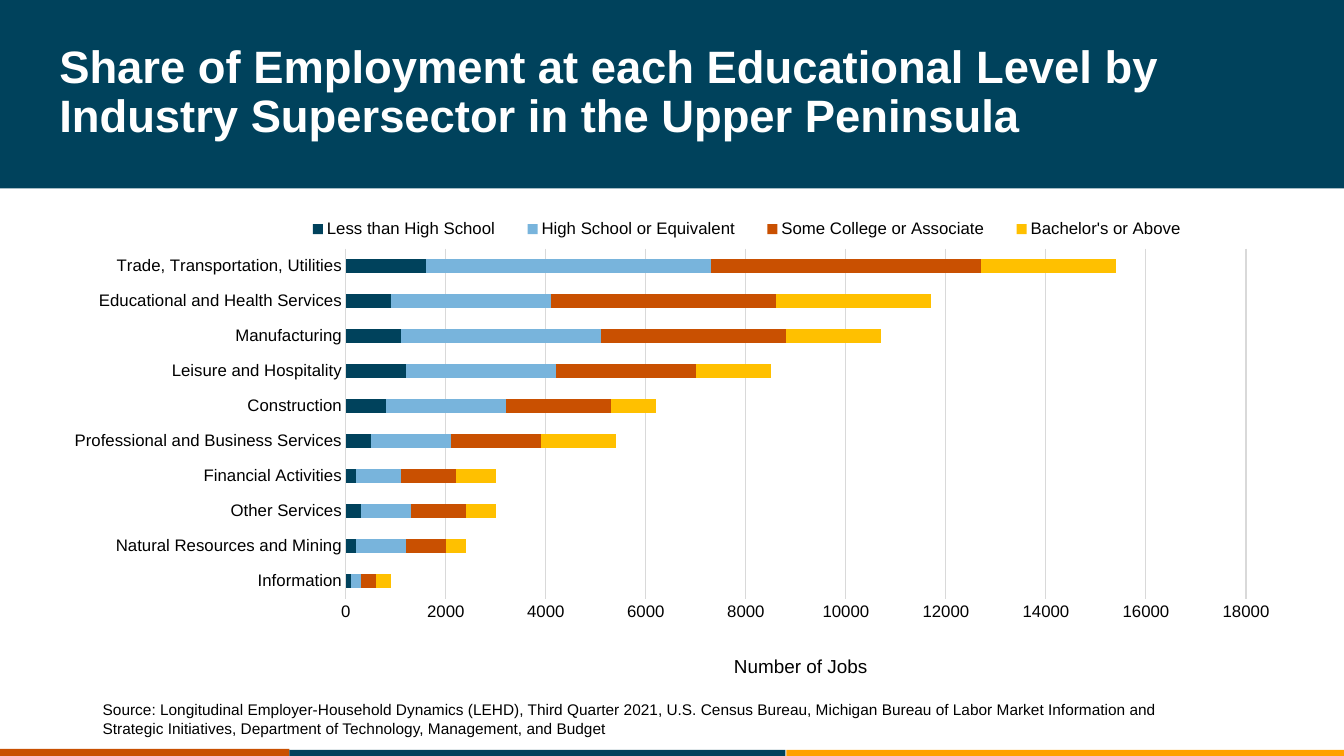
from dataclasses import dataclass

from lxml.etree import SubElement
from pptx import Presentation
from pptx.chart.data import CategoryChartData
from pptx.dml.color import RGBColor
from pptx.enum.chart import XL_CHART_TYPE, XL_LEGEND_POSITION, XL_TICK_MARK
from pptx.enum.shapes import MSO_SHAPE
from pptx.enum.text import MSO_ANCHOR
from pptx.oxml.ns import qn
from pptx.util import Inches, Pt


@dataclass(frozen=True)
class Theme:
    """Colours, font and type sizes of the slide."""
    navy: str = "00425C"
    blue: str = "78B4DC"
    rust: str = "C95001"
    gold: str = "FFC000"
    orange: str = "FFA100"
    grid: str = "D9D9D9"
    black: str = "000000"
    white: str = "FFFFFF"
    font: str = "Arial"
    title: float = 32.4
    axis_title: float = 13.5
    label: float = 12
    source: float = 11


THEME = Theme()

INDUSTRIES = [
    "Information", "Natural Resources and Mining", "Other Services",
    "Financial Activities", "Professional and Business Services",
    "Construction", "Leisure and Hospitality", "Manufacturing",
    "Educational and Health Services", "Trade, Transportation, Utilities",
]

EDUCATION_LEVELS = [
    ("Less than High School", THEME.navy,
     [100, 200, 300, 200, 500, 800, 1200, 1100, 900, 1600]),
    ("High School or Equivalent", THEME.blue,
     [200, 1000, 1000, 900, 1600, 2400, 3000, 4000, 3200, 5700]),
    ("Some College or Associate", THEME.rust,
     [300, 800, 1100, 1100, 1800, 2100, 2800, 3700, 4500, 5400]),
    ("Bachelor's or Above", THEME.gold,
     [300, 400, 600, 800, 1500, 900, 1500, 1900, 3100, 2700]),
]

BANDS = [
    (-0.01, -0.01, 13.35, 1.88, THEME.navy),
    (-0.01, 7.43, 2.88, 0.13, THEME.rust),
    (2.87, 7.44, 4.92, 0.13, THEME.navy),
    (7.8, 7.44, 5.55, 0.13, THEME.orange),
]


def style_font(font, size, color=THEME.black, bold=False):
    """Set typeface, size, colour and weight."""
    font.name = THEME.font
    font.size = Pt(size)
    font.bold = bold
    font.color.rgb = RGBColor.from_string(color)


def add_band(page, left, top, width, height, color):
    """Add a plain filled rectangle."""
    band = page.shapes.add_shape(
        MSO_SHAPE.RECTANGLE, Inches(left), Inches(top), Inches(width), Inches(height))
    band.shadow.inherit = False
    band.fill.solid()
    band.fill.fore_color.rgb = RGBColor.from_string(color)
    band.line.fill.background()


def add_text(page, bounds, text, size, color=THEME.black, bold=False,
             anchor=MSO_ANCHOR.TOP, spacing=1.0):
    """Add a wrapped text box with one paragraph."""
    box = page.shapes.add_textbox(*map(Inches, bounds))
    frame = box.text_frame
    frame.word_wrap = True
    frame.vertical_anchor = anchor
    para = frame.paragraphs[0]
    para.line_spacing = spacing
    span = para.add_run()
    span.text = text
    style_font(span.font, size, color, bold)


def place(element, index, target=None, **position):
    """Give a chart part a manual position as fractions of the chart."""
    for old in element.findall(qn("c:layout")):
        element.remove(old)
    layout = SubElement(element, qn("c:layout"))
    element.insert(index, layout)
    manual = SubElement(layout, qn("c:manualLayout"))
    settings = {"layoutTarget": target} if target else {}
    settings.update(xMode="edge", yMode="edge", **position)
    for name, value in settings.items():
        SubElement(manual, qn(f"c:{name}")).set("val", str(value))


def style_line(line):
    """Draw a thin grey chart line."""
    line.color.rgb = RGBColor.from_string(THEME.grid)
    line.width = Pt(0.75)


def style_axes(chart):
    """Style both axes and the job count title."""
    for axis in (chart.category_axis, chart.value_axis):
        axis.major_tick_mark = XL_TICK_MARK.NONE
        axis.minor_tick_mark = XL_TICK_MARK.NONE
        style_font(axis.tick_labels.font, THEME.label)
    style_line(chart.category_axis.format.line)
    jobs = chart.value_axis
    jobs.minimum_scale, jobs.maximum_scale, jobs.major_unit = 0, 18000, 2000
    jobs.format.line.fill.background()
    style_line(jobs.major_gridlines.format.line)
    span = jobs.axis_title.text_frame.paragraphs[0].add_run()
    span.text = "Number of Jobs"
    style_font(span.font, THEME.axis_title)
    place(jobs.axis_title._element, 1, x=0.547, y=0.94)


def add_jobs_chart(page):
    """Add the stacked bars of jobs by industry and education."""
    data = CategoryChartData(number_format="General")
    data.categories = INDUSTRIES
    for name, _, values in EDUCATION_LEVELS:
        data.add_series(name, values)
    chart = page.shapes.add_chart(
        XL_CHART_TYPE.BAR_STACKED, Inches(0.49), Inches(2.05),
        Inches(12.35), Inches(4.73), data).chart
    style_font(chart.font, THEME.label)
    chart.has_title = False
    plot = chart.plots[0]
    plot.gap_width, plot.overlap = 150, 100
    plot.vary_by_categories = False
    for series, (_, color, _) in zip(plot.series, EDUCATION_LEVELS):
        series.format.fill.solid()
        series.format.fill.fore_color.rgb = RGBColor.from_string(color)
    style_axes(chart)
    chart.has_legend = True
    chart.legend.position = XL_LEGEND_POSITION.TOP
    chart.legend.include_in_layout = False
    style_font(chart.legend.font, THEME.label)
    place(chart.legend._element, 1, x=0.19, y=0.015, w=0.74, h=0.065)
    plot_area = chart._chartSpace.find(f".//{qn('c:plotArea')}")
    place(plot_area, 0, "inner", x=0.238, y=0.089, w=0.723, h=0.74)


def main():
    """Build the slide and save it."""
    deck = Presentation()
    deck.slide_width, deck.slide_height = Inches(13.33), Inches(7.5)
    page = deck.slides.add_slide(deck.slide_layouts[6])
    for band in BANDS:
        add_band(page, *band)
    add_jobs_chart(page)
    add_text(page, (0.49, 0.32, 11.11, 1.22),
             "Share of Employment at each Educational Level by "
             "Industry Supersector in the Upper Peninsula",
             THEME.title, THEME.white, True, MSO_ANCHOR.MIDDLE, 0.9)
    add_text(page, (0.92, 6.9, 11.27, 0.47),
             "Source: Longitudinal Employer-Household Dynamics (LEHD), Third Quarter 2021, "
             "U.S. Census Bureau, Michigan Bureau of Labor Market Information and Strategic "
             "Initiatives, Department of Technology, Management, and Budget",
             THEME.source)
    deck.save("out.pptx")


if __name__ == "__main__":
    main()
